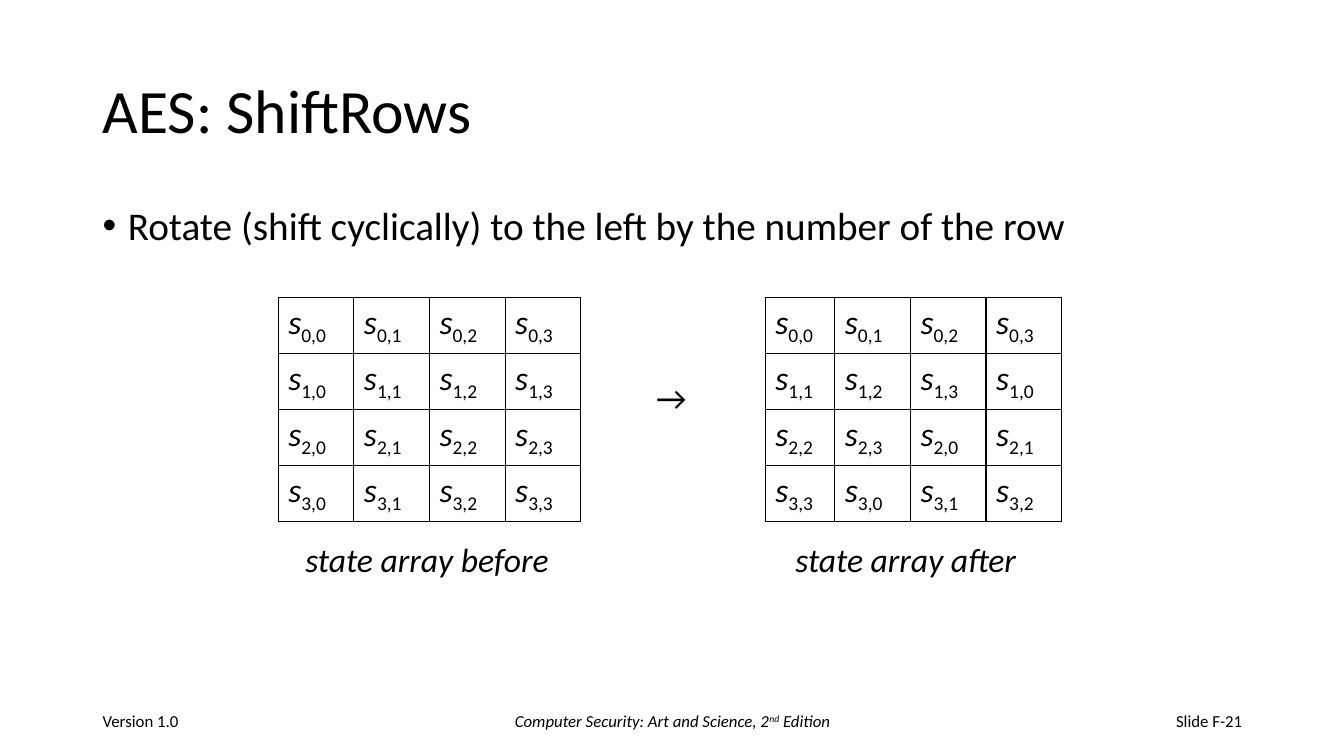
from lxml.etree import SubElement
from pptx import Presentation
from pptx.dml.color import RGBColor
from pptx.enum.text import MSO_ANCHOR, PP_ALIGN
from pptx.oxml.ns import qn
from pptx.util import Inches, Pt

BLACK = RGBColor(0, 0, 0)
WHITE = RGBColor(255, 255, 255)
FONT = "Calibri"
SIDES = ("a:lnL", "a:lnR", "a:lnT", "a:lnB")


def add_run(par, text, size, italic=False, base=0):
    """Add a run; base is the shift from the baseline in percent."""
    run = par.add_run()
    run.text = text
    font = run.font
    font.name, font.size, font.italic = FONT, Pt(size), italic
    font.color.rgb = BLACK
    if base:
        run._r.get_or_add_rPr().set("baseline", str(base * 1000))


def add_box(left, top, width, height, anchor=MSO_ANCHOR.TOP, wrap=True):
    """Add an empty text box and return its first paragraph."""
    box = slide.shapes.add_textbox(
        Inches(left), Inches(top), Inches(width), Inches(height))
    frame = box.text_frame
    frame.word_wrap = wrap
    frame.vertical_anchor = anchor
    return frame.paragraphs[0]


deck = Presentation()
deck.slide_width, deck.slide_height = Inches(13.33), Inches(7.5)
slide = deck.slides.add_slide(deck.slide_layouts[6])
slide.background.fill.solid()
slide.background.fill.fore_color.rgb = WHITE

# Title and bullet
title = add_box(0.92, 0.4, 11.5, 1.45, MSO_ANCHOR.MIDDLE)
title.line_spacing = 0.9
add_run(title, "AES: ShiftRows", 44)

point = add_box(0.92, 2, 11.5, 4.76)
props = point._p.get_or_add_pPr()
props.set("marL", str(Inches(0.25)))
props.set("indent", str(Inches(-0.25)))
SubElement(props, qn("a:buFont"), typeface="Arial")
SubElement(props, qn("a:buChar"), char="•")
point.line_spacing = 0.9
add_run(point, "Rotate (shift cyclically) to the left by the number of the row", 28)

# Footer
footer = [
    (0.92, 3, PP_ALIGN.LEFT, [("Version 1.0", False, 0)]),
    (4.42, 4.5, PP_ALIGN.CENTER, [
        ("Computer Security: Art and Science, 2", True, 0),
        ("nd", True, 30),
        (" Edition", True, 0)]),
    (9.42, 3, PP_ALIGN.RIGHT, [("Slide F-21", False, 0)]),
]
for left, width, align, parts in footer:
    par = add_box(left, 6.95, width, 0.4, MSO_ANCHOR.MIDDLE)
    par.alignment = align
    for text, italic, base in parts:
        add_run(par, text, 12, italic, base)

# State arrays: row r is rotated left by r * step
arrays = [
    (2.76, 0.75, 0, "state array before", 2.93, 2.64),
    (7.59, 0.69, 1, "state array after", 7.79, 2.42),
]
for left, first, step, label, start, span in arrays:
    grid = slide.shapes.add_table(
        4, 4, Inches(left), Inches(2.95), Inches(first + 2.25), Inches(2.2)).table
    grid.first_row = grid.horz_banding = False
    for col in range(4):
        grid.columns[col].width = Inches(0.75 if col else first)
    for row in range(4):
        grid.rows[row].height = Inches(0.55)
        for col in range(4):
            cell = grid.cell(row, col)
            props = cell._tc.get_or_add_tcPr()
            for side in SIDES:
                line = SubElement(props, qn(side), w=str(Pt(1)))
                fill = SubElement(line, qn("a:solidFill"))
                SubElement(fill, qn("a:srgbClr"), val=str(BLACK))
            cell.fill.background()
            par = cell.text_frame.paragraphs[0]
            add_run(par, "s", 24, True)
            add_run(par, f"{row},{(col + row * step) % 4}", 24, base=-25)
    add_run(add_box(start, 5.3, span, 0.5, wrap=False), label, 24, True)

add_run(add_box(6.41, 3.69, 0.51, 0.5, wrap=False), "→", 24)

deck.save("out.pptx")
